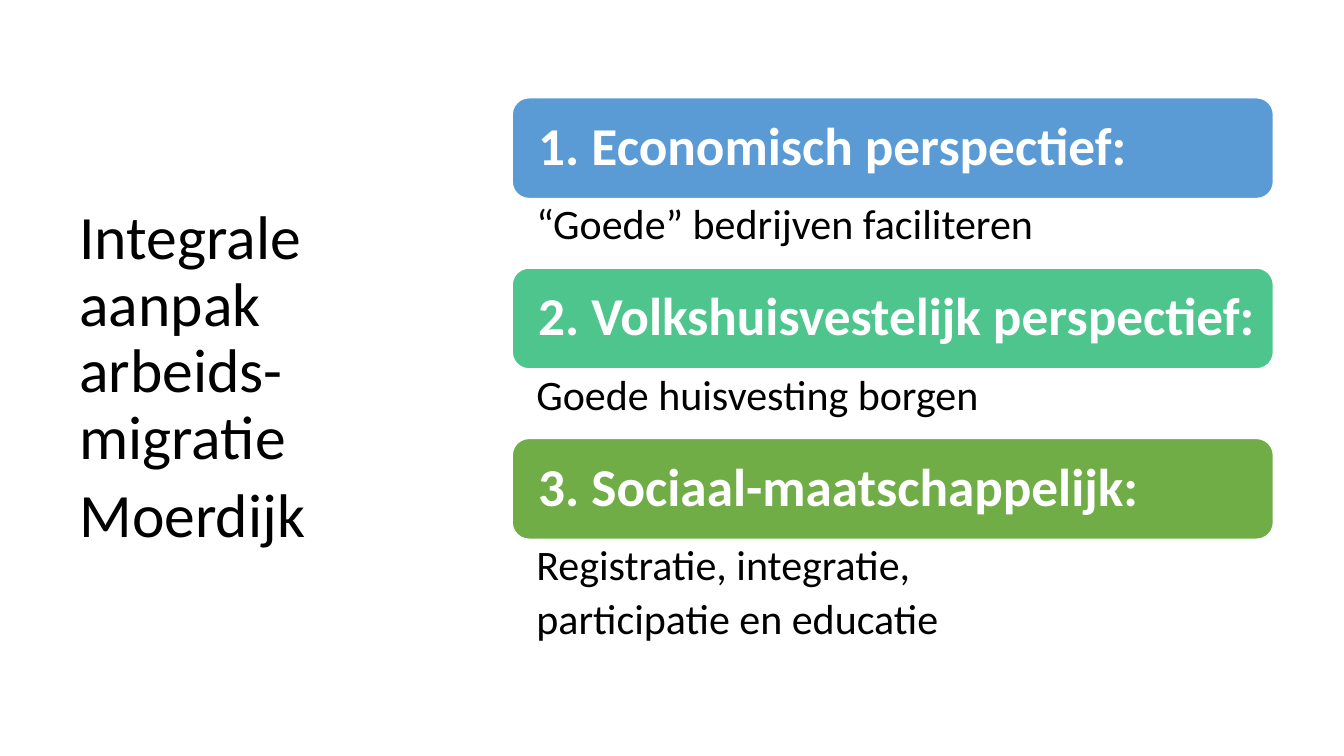
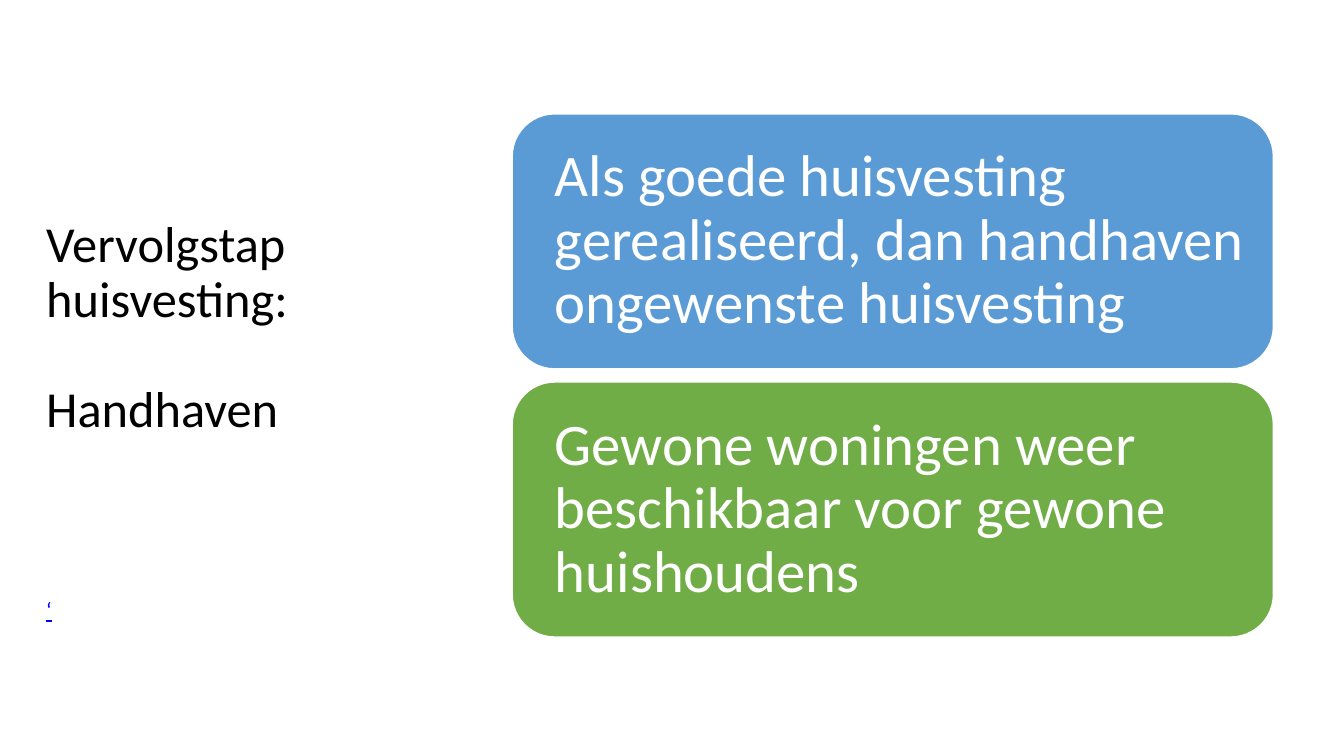
from pptx import Presentation
from pptx.dml.color import RGBColor
from pptx.enum.shapes import MSO_SHAPE
from pptx.enum.text import MSO_ANCHOR, PP_ALIGN
from pptx.util import Inches, Pt

FONT = "Calibri"
BLACK = RGBColor(0x00, 0x00, 0x00)
WHITE = RGBColor(0xFF, 0xFF, 0xFF)
LINK_BLUE = RGBColor(0x00, 0x00, 0xFF)
BLUE = RGBColor(0x5B, 0x9B, 0xD5)
TEAL = RGBColor(0x4D, 0xC5, 0x8D)
GREEN = RGBColor(0x70, 0xAD, 0x47)

PANEL_LEFT, PANEL_WIDTH = 5.08, 7.55
TITLE_BOTTOM = 6.81

# Title paragraphs: text, size, space before, colour, underline
APPROACH_TITLE = [
    ("Integrale\vaanpak\varbeids-migratie", 44, 0, BLACK, False),
    ("Moerdijk", 44, 8, BLACK, False),
]
ENFORCEMENT_TITLE = [
    ("Vervolgstap huisvesting:", 36, 0, BLACK, False),
    ("Handhaven", 36, 39.5, BLACK, False),
    ("‘", 16, 115, LINK_BLUE, True),
]
PERSPECTIVES = [
    ("1. Economisch perspectief:", BLUE, ["“Goede” bedrijven faciliteren"]),
    ("2. Volkshuisvestelijk perspectief:", TEAL, ["Goede huisvesting borgen"]),
    ("3. Sociaal-maatschappelijk:", GREEN,
     ["Registratie, integratie,", "participatie en educatie"]),
]
ENFORCEMENT_STEPS = [
    ("Als goede huisvesting gerealiseerd, dan handhaven ongewenste huisvesting", BLUE),
    ("Gewone woningen weer beschikbaar voor gewone huishoudens", GREEN),
]


def style_paragraph(paragraph, size, color, bold=False, underline=False):
    paragraph.alignment = PP_ALIGN.LEFT
    paragraph.line_spacing = 0.9
    for run in paragraph.runs:
        font = run.font
        font.name, font.size, font.bold = FONT, Pt(size), bold
        font.underline = underline
        font.color.rgb = color


def add_text_box(slide, left, top, width, height):
    text_frame = slide.shapes.add_textbox(
        Inches(left), Inches(top), Inches(width), Inches(height)).text_frame
    text_frame.word_wrap = True
    return text_frame


def add_title(slide, left, top, width, paragraphs):
    text_frame = add_text_box(slide, left, top, width, TITLE_BOTTOM - top)
    text_frame.vertical_anchor = MSO_ANCHOR.MIDDLE
    text_frame.text = "\n".join(text for text, *_ in paragraphs)
    for paragraph, (_, size, before, color, underline) in zip(
            text_frame.paragraphs, paragraphs):
        style_paragraph(paragraph, size, color, underline=underline)
        paragraph.space_before = Pt(before)


def add_panel(slide, top, height, text, fill, size, inset, bold=False):
    shape = slide.shapes.add_shape(
        MSO_SHAPE.ROUNDED_RECTANGLE, Inches(PANEL_LEFT), Inches(top),
        Inches(PANEL_WIDTH), Inches(height))
    shape.shadow.inherit = False
    shape.fill.solid()
    shape.fill.fore_color.rgb = fill
    shape.line.color.rgb = WHITE
    shape.line.width = Pt(1)
    text_frame = shape.text_frame
    text_frame.word_wrap = True
    text_frame.vertical_anchor = MSO_ANCHOR.MIDDLE
    text_frame.margin_left = Inches(inset)
    text_frame.margin_right = Inches(0.1)
    text_frame.text = text
    style_paragraph(text_frame.paragraphs[0], size, WHITE, bold)


def add_details(slide, top, height, lines):
    text_frame = add_text_box(slide, PANEL_LEFT, top, PANEL_WIDTH, height)
    text_frame.margin_left = Inches(0.24)
    text_frame.text = "\n".join(lines)
    for paragraph in text_frame.paragraphs:
        style_paragraph(paragraph, 30, BLACK)
        paragraph.space_after = Pt(6)


def build_approach_slide(slide):
    add_title(slide, 0.69, 0.7, 3.87, APPROACH_TITLE)
    top, heading_height = 0.97, 1
    for heading, fill, details in PERSPECTIVES:
        add_panel(slide, top, heading_height, heading, fill, 38, 0.21, bold=True)
        top += heading_height
        details_height = 0.24 + 0.45 * len(details)
        add_details(slide, top, details_height, details)
        top += details_height


def build_enforcement_slide(slide):
    add_title(slide, 0.36, 1.55, 4.54, ENFORCEMENT_TITLE)
    height, gap = 2.53, 0.13
    for index, (text, fill) in enumerate(ENFORCEMENT_STEPS):
        add_panel(slide, 1.13 + index * (height + gap), height, text, fill, 42, 0.3)


def main():
    presentation = Presentation()
    presentation.slide_width = Inches(13.33)
    presentation.slide_height = Inches(7.5)
    blank_layout = presentation.slide_layouts[6]
    for build in (build_approach_slide, build_enforcement_slide):
        build(presentation.slides.add_slide(blank_layout))
    presentation.save("out.pptx")


if __name__ == "__main__":
    main()
